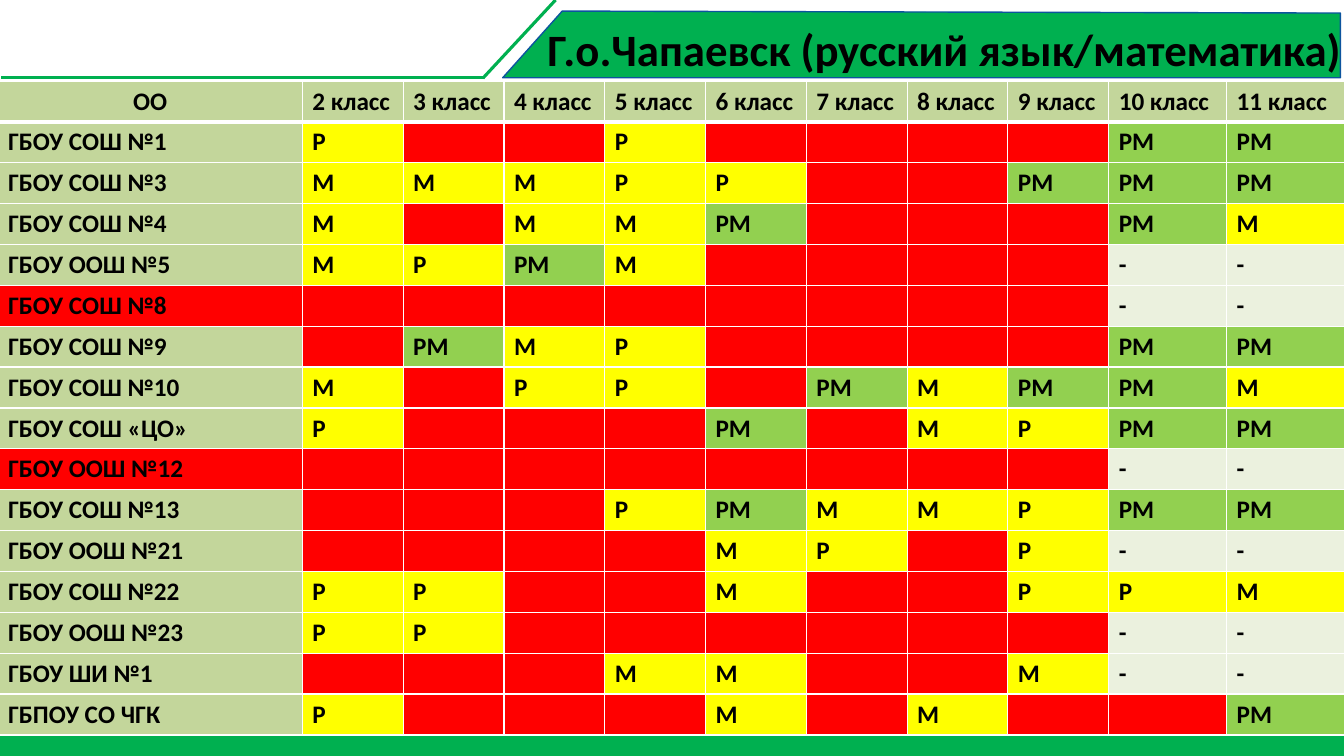
from lxml.etree import SubElement
from pptx import Presentation
from pptx.dml.color import RGBColor
from pptx.enum.shapes import MSO_CONNECTOR, MSO_SHAPE
from pptx.enum.text import MSO_ANCHOR, MSO_AUTO_SIZE, PP_ALIGN
from pptx.oxml.ns import qn
from pptx.util import Cm, Pt

GREEN, BLUE, WHITE, BLACK = "00B050", "0C549E", "FFFFFF", "000000"
SAGE, RED = "C3D69B", "FF0000"
RESULT_FILLS = {"": RED, "Р": "FFFF00", "М": "FFFF00", "РМ": "92D050", "-": "EBF1DE"}
EMPTY_MARK = "."

SCHOOLS = [
    ("ГБОУ СОШ №1", "Р . . Р . . . . РМ РМ"),
    ("ГБОУ СОШ №3", "М М М Р Р . . РМ РМ РМ"),
    ("ГБОУ СОШ №4", "М . М М РМ . . . РМ М"),
    ("ГБОУ ООШ №5", "М Р РМ М . . . . - -"),
    ("ГБОУ СОШ №8", ". . . . . . . . - -"),
    ("ГБОУ СОШ №9", ". РМ М Р . . . . РМ РМ"),
    ("ГБОУ СОШ №10", "М . Р Р . РМ М РМ РМ М"),
    ("ГБОУ СОШ «ЦО»", "Р . . . РМ . М Р РМ РМ"),
    ("ГБОУ ООШ №12", ". . . . . . . . - -"),
    ("ГБОУ СОШ №13", ". . . Р РМ М М Р РМ РМ"),
    ("ГБОУ ООШ №21", ". . . . М Р . Р - -"),
    ("ГБОУ СОШ №22", "Р Р . . М . . Р Р М"),
    ("ГБОУ ООШ №23", "Р Р . . . . . . - -"),
    ("ГБОУ ШИ №1", ". . . М М . . М - -"),
    ("ГБПОУ СО ЧГК", "Р . . . М . М . . РМ"),
]


def color(value):
    return RGBColor.from_string(value)


class SlideBuilder:
    font_name = "Calibri"
    table_size = 18
    title_size = 32

    def __init__(self, slide):
        self.slide = slide
        self.shapes = slide.shapes

    def format_text(self, paragraph, size):
        for run in paragraph.runs:
            run.font.name = self.font_name
            run.font.size = Pt(size)
            run.font.bold = True
            run.font.color.rgb = color(BLACK)

    def title(self, text, left, top, width, height):
        shape = self.shapes.title
        shape.left, shape.top = Cm(left), Cm(top)
        shape.width, shape.height = Cm(width), Cm(height)
        frame = shape.text_frame
        frame.text = text
        frame.word_wrap = True
        frame.auto_size = MSO_AUTO_SIZE.SHAPE_TO_FIT_TEXT
        frame.vertical_anchor = MSO_ANCHOR.TOP
        frame.paragraphs[0].alignment = PP_ALIGN.LEFT
        self.format_text(frame.paragraphs[0], self.title_size)
        shape.element.getparent().append(shape.element)

    def banner(self, points):
        corners = [(Cm(x), Cm(y)) for x, y in points]
        builder = self.shapes.build_freeform(*corners[0])
        builder.add_line_segments(corners[1:], close=True)
        shape = builder.convert_to_shape()
        shape.shadow.inherit = False
        shape.fill.solid()
        shape.fill.fore_color.rgb = color(GREEN)
        shape.line.color.rgb = color(BLUE)
        shape.line.width = Pt(1)

    def bar(self, left, top, width, height):
        shape = self.shapes.add_shape(
            MSO_SHAPE.RECTANGLE, Cm(left), Cm(top), Cm(width), Cm(height))
        shape.shadow.inherit = False
        shape.fill.solid()
        shape.fill.fore_color.rgb = color(GREEN)
        shape.line.fill.background()

    def line(self, *ends):
        connector = self.shapes.add_connector(
            MSO_CONNECTOR.STRAIGHT, *[Cm(end) for end in ends])
        connector.line.color.rgb = color(GREEN)
        connector.line.width = Pt(2.25)
        SubElement(connector.element.spPr, qn("a:effectLst"))

    def borders(self, cell, top, bottom):
        properties = cell._tc.get_or_add_tcPr()
        for side, width in (("L", 1), ("R", 1), ("T", top), ("B", bottom)):
            border = SubElement(properties, qn("a:ln" + side), w=str(Pt(width)))
            fill = SubElement(border, qn("a:solidFill"))
            SubElement(fill, qn("a:srgbClr"), val=WHITE)

    def cell(self, cell, text, fill, row):
        self.borders(cell, top=3 if row == 1 else 1, bottom=3 if row == 0 else 1)
        cell.fill.solid()
        cell.fill.fore_color.rgb = color(fill)
        if row:
            cell.vertical_anchor = MSO_ANCHOR.MIDDLE
        cell.text_frame.text = text
        self.format_text(cell.text_frame.paragraphs[0], self.table_size)

    def table(self, rows, left, top, widths, row_height):
        frame = self.shapes.add_table(
            len(rows), len(widths), Cm(left), Cm(top),
            Cm(sum(widths)), Cm(row_height * len(rows)))
        table = frame.table
        for column, width in zip(table.columns, widths):
            column.width = Cm(width)
        for row_index, row in enumerate(rows):
            table.rows[row_index].height = Cm(row_height)
            for column_index, (text, fill) in enumerate(row):
                self.cell(table.cell(row_index, column_index), text, fill, row_index)
        table.cell(0, 0).text_frame.paragraphs[0].alignment = PP_ALIGN.CENTER


def school_row(name, marks):
    results = ["" if mark == EMPTY_MARK else mark for mark in marks.split()]
    failed = not any(result.strip("-") for result in results)
    return [(name, RED if failed else SAGE)] + [
        (result, RESULT_FILLS[result]) for result in results]


def main():
    presentation = Presentation()
    presentation.slide_width, presentation.slide_height = Cm(33.87), Cm(19.05)
    slide = presentation.slides.add_slide(presentation.slide_layouts[5])
    builder = SlideBuilder(slide)

    builder.banner([(14.17, 0.28), (33.78, 0.33), (33.78, 1.96), (12.67, 1.96)])
    builder.bar(0, 18.54, 33.87, 0.51)
    builder.line(14, 0, 12.17, 1.97)
    builder.line(12.19, 1.96, 0.03, 1.96)

    header = ["ОО"] + [f"{grade} класс" for grade in range(2, 12)]
    rows = [[(text, SAGE) for text in header]]
    rows += [school_row(name, marks) for name, marks in SCHOOLS]
    builder.table(rows, -0.05, 2.04, [7.67] + [2.54] * 8 + [2.97] * 2, 1.03)
    builder.title("Г.о.Чапаевск (русский язык/математика)", 13.54, 0.41, 20.68, 1.62)

    presentation.save("out.pptx")


if __name__ == "__main__":
    main()
